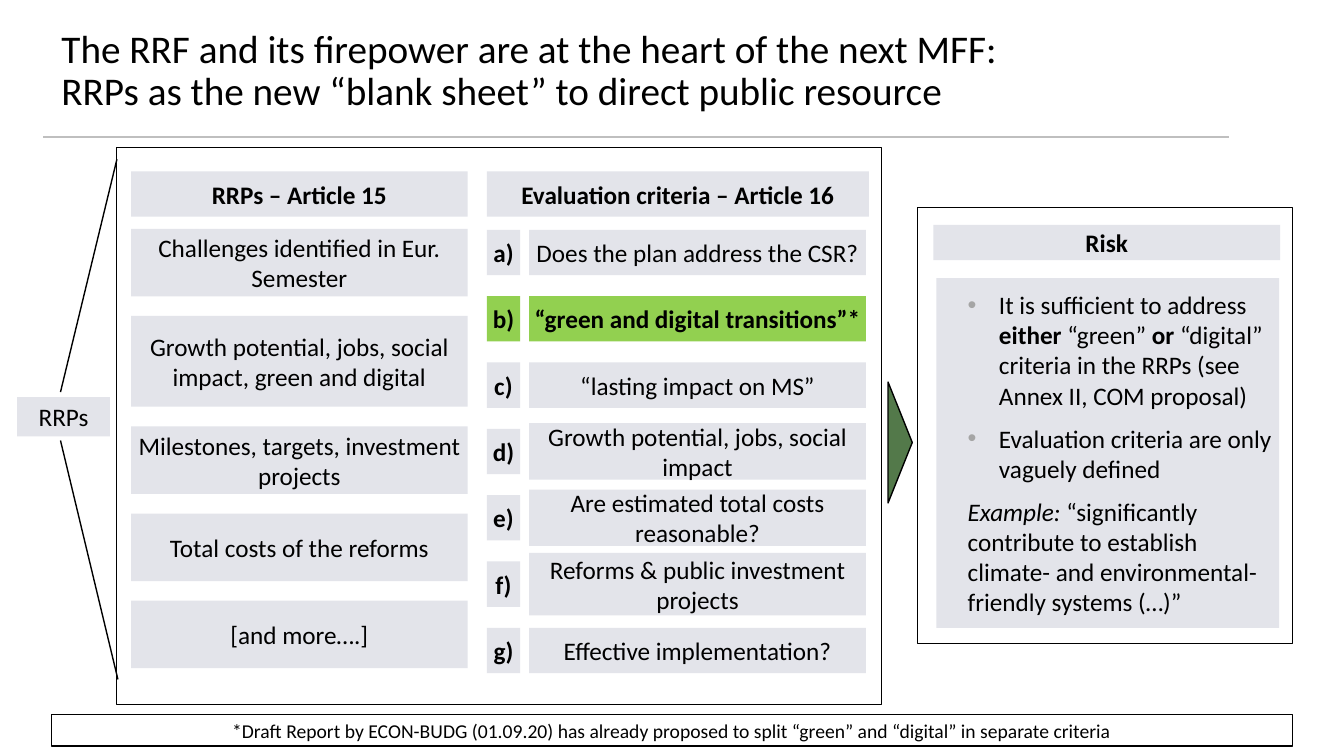
from dataclasses import dataclass

import pptx
import pptx.util
import pptx.dml.color
import pptx.enum.shapes
import pptx.enum.text
import pptx.oxml.ns
import lxml.etree

SHAPE = pptx.enum.shapes.MSO_SHAPE
ALIGN = pptx.enum.text.PP_ALIGN
ANCHOR = pptx.enum.text.MSO_ANCHOR


@dataclass(frozen=True)
class Theme:
    font: str = "Calibri"
    ink: str = "000000"
    paper: str = "FFFFFF"
    panel: str = "E3E4EA"
    highlight: str = "92D050"
    arrow: str = "53794A"
    rule: str = "BFBFBF"
    bullet: str = "A5A5A5"
    title_size: int = 28
    body_size: int = 18
    note_size: int = 14
    space_after: int = 9


THEME = Theme()
COLS, ROWS = 133.33, 75
STEPS = [
    ("Challenges identified in Eur. Semester", 6.7),
    ("Growth potential, jobs, social impact, green and digital", 9),
    ("Milestones, targets, investment projects", 6.7),
    ("Total costs of the reforms", 6.7),
    ("[and more….]", 6.7),
]
CRITERIA = [
    ("Does the plan address the CSR?", 4.5),
    ("“green and digital transitions”*", 4.5),
    ("“lasting impact on MS”", 4.5),
    ("Growth potential, jobs, social impact", 5.6),
    ("Are estimated total costs reasonable?", 5.6),
    ("Reforms & public investment projects", 6.2),
    ("Effective implementation?", 4.5),
]
RISKS = [
    (True, [("It is sufficient to address ", ""), ("either", "b"), (" “green” ", ""), ("or", "b"),
            (" “digital” criteria in the RRPs (see Annex II, COM proposal)", "")]),
    (True, [("Evaluation criteria are only vaguely defined", "")]),
    (False, [("Example:", "i"),
             (" “significantly contribute to establish climate- and environmental-friendly systems (…)”", "")]),
]


def grid(*cells):
    return [pptx.util.Inches(c / 10) for c in cells]


def rgb(value):
    return pptx.dml.color.RGBColor.from_string(value)


def place(sp, x, y, w, h):
    sp.left, sp.top, sp.width, sp.height = grid(x, y, w, h)


def style(r, size, bold=False, italic=False):
    r.font.name, r.font.size = THEME.font, pptx.util.Pt(size)
    r.font.bold, r.font.italic = bold, italic
    r.font.color.rgb = rgb(THEME.ink)


def clear_insets(tf):
    tf.margin_left = tf.margin_right = tf.margin_top = tf.margin_bottom = 0


def add_block(s, x, y, w, h, fill=None, line=None, kind=SHAPE.RECTANGLE):
    sp = s.shapes.add_shape(kind, *grid(x, y, w, h))
    sp.shadow.inherit = False
    if fill:
        sp.fill.solid()
        sp.fill.fore_color.rgb = rgb(fill)
    else:
        sp.fill.background()
    if line:
        sp.line.color.rgb, sp.line.width = rgb(THEME.ink), pptx.util.Pt(line)
    else:
        sp.line.fill.background()
    return sp


def add_label(s, text, x, y, w, h, bold=False, fill=THEME.panel):
    sp = add_block(s, x, y, w, h, fill)
    tf = sp.text_frame
    clear_insets(tf)
    write_centred(tf, text, THEME.body_size, bold)
    tf.paragraphs[0].space_after = pptx.util.Pt(THEME.space_after)


def write_centred(tf, text, size, bold=False):
    tf.word_wrap, tf.vertical_anchor = True, ANCHOR.MIDDLE
    tf.text = text
    p = tf.paragraphs[0]
    p.alignment = ALIGN.CENTER
    style(p.runs[0], size, bold)


def add_line(s, x1, y1, x2, y2, color=THEME.ink):
    c = s.shapes.add_connector(pptx.enum.shapes.MSO_CONNECTOR.STRAIGHT, *grid(x1, y1, x2, y2))
    c.line.color.rgb, c.line.width = rgb(color), pptx.util.Pt(1)
    lxml.etree.SubElement(c._element.spPr, pptx.oxml.ns.qn("a:effectLst"))


def set_bullet(p, bulleted):
    qn = pptx.oxml.ns.qn
    pPr = p._p.get_or_add_pPr()
    pPr.set("marL", str(pptx.util.Inches(0.62 if bulleted else 0.31)))
    pPr.set("indent", str(pptx.util.Inches(-0.31 if bulleted else 0)))
    if bulleted:
        color = lxml.etree.SubElement(pPr, qn("a:buClr"))
        lxml.etree.SubElement(color, qn("a:srgbClr"), val=THEME.bullet)
        lxml.etree.SubElement(pPr, qn("a:buFont"), typeface="Arial")
        lxml.etree.SubElement(pPr, qn("a:buChar"), char="•")
    else:
        lxml.etree.SubElement(pPr, qn("a:buNone"))


def write_title(s):
    sp = s.shapes.title
    place(sp, 5.1, 1.6, 104.3, 11)
    tf = sp.text_frame
    tf.word_wrap, tf.vertical_anchor = True, ANCHOR.MIDDLE
    tf.auto_size = pptx.enum.text.MSO_AUTO_SIZE.NONE
    p = tf.paragraphs[0]
    p.text = ("The RRF and its firepower are at the heart of the next MFF:\v"
              "RRPs as the new “blank sheet” to direct public resource")
    p.alignment, p.line_spacing = ALIGN.LEFT, 0.9
    for r in p.runs:
        style(r, THEME.title_size)


def write_risks(s):
    add_block(s, 91, 20.6, 37.2, 43.2, line=0.75)
    add_label(s, "Risk", 92.6, 22.3, 34.4, 3.5, bold=True)
    sp = s.placeholders[1]
    place(sp, 92.9, 27.6, 34, 34.7)
    sp.fill.solid()
    sp.fill.fore_color.rgb = rgb(THEME.panel)
    tf = sp.text_frame
    clear_insets(tf)
    tf.word_wrap, tf.vertical_anchor = True, ANCHOR.MIDDLE
    tf.auto_size = pptx.enum.text.MSO_AUTO_SIZE.NONE
    for i, (bulleted, parts) in enumerate(RISKS):
        p = tf.add_paragraph() if i else tf.paragraphs[0]
        set_bullet(p, bulleted)
        p.alignment = ALIGN.LEFT
        p.space_before, p.space_after = pptx.util.Pt(0), pptx.util.Pt(THEME.space_after)
        for text, mark in parts:
            r = p.add_run()
            r.text = text
            style(r, THEME.body_size, mark == "b", mark == "i")


def draw_steps(s):
    add_label(s, "RRPs – Article 15", 13, 17, 33.4, 4.5, bold=True)
    top, gap = 22.7, 1.95
    for text, height in STEPS:
        add_label(s, text, 13, top, 33.4, height)
        top += height + gap


def draw_criteria(s):
    add_label(s, "Evaluation criteria – Article 16", 48.3, 17, 37.9, 4.5, bold=True)
    first, pitch, key_height = 25.05, 6.58, 4.5
    for i, (text, height) in enumerate(CRITERIA):
        middle = first + i * pitch
        chosen = i == 1
        fill = THEME.highlight if chosen else THEME.panel
        add_label(s, "abcdefg"[i] + ")", 48.3, middle - key_height / 2, 3.3, key_height, True, fill)
        add_label(s, text, 52.5, middle - height / 2, 33.4, height, chosen, fill)


def main():
    prs = pptx.Presentation()
    prs.slide_width, prs.slide_height = grid(COLS, ROWS)
    s = prs.slides.add_slide(prs.slide_layouts[1])
    write_title(s)
    add_line(s, 4.3, 13.6, 121.9, 13.6, THEME.rule)
    add_label(s, "RRPs", 1.7, 39.4, 9.2, 3.9)
    add_line(s, 6, 38.9, 11.6, 15.8)
    add_line(s, 6, 43.7, 11.7, 67.4)
    arrow = add_block(s, 83.3, 42.7, 12, 2.4, THEME.arrow, 1, SHAPE.ISOSCELES_TRIANGLE)
    arrow.rotation = 90
    add_block(s, 11.6, 14.6, 75.9, 55.3, line=0.75)
    draw_steps(s)
    draw_criteria(s)
    write_risks(s)
    note = add_block(s, 5.1, 70.9, 123.1, 3.1, THEME.paper, 1)
    write_centred(note.text_frame, "*Draft Report by ECON-BUDG (01.09.20) has already proposed to split "
                  "“green” and “digital” in separate criteria", THEME.note_size)
    prs.save("out.pptx")


if __name__ == "__main__":
    main()
